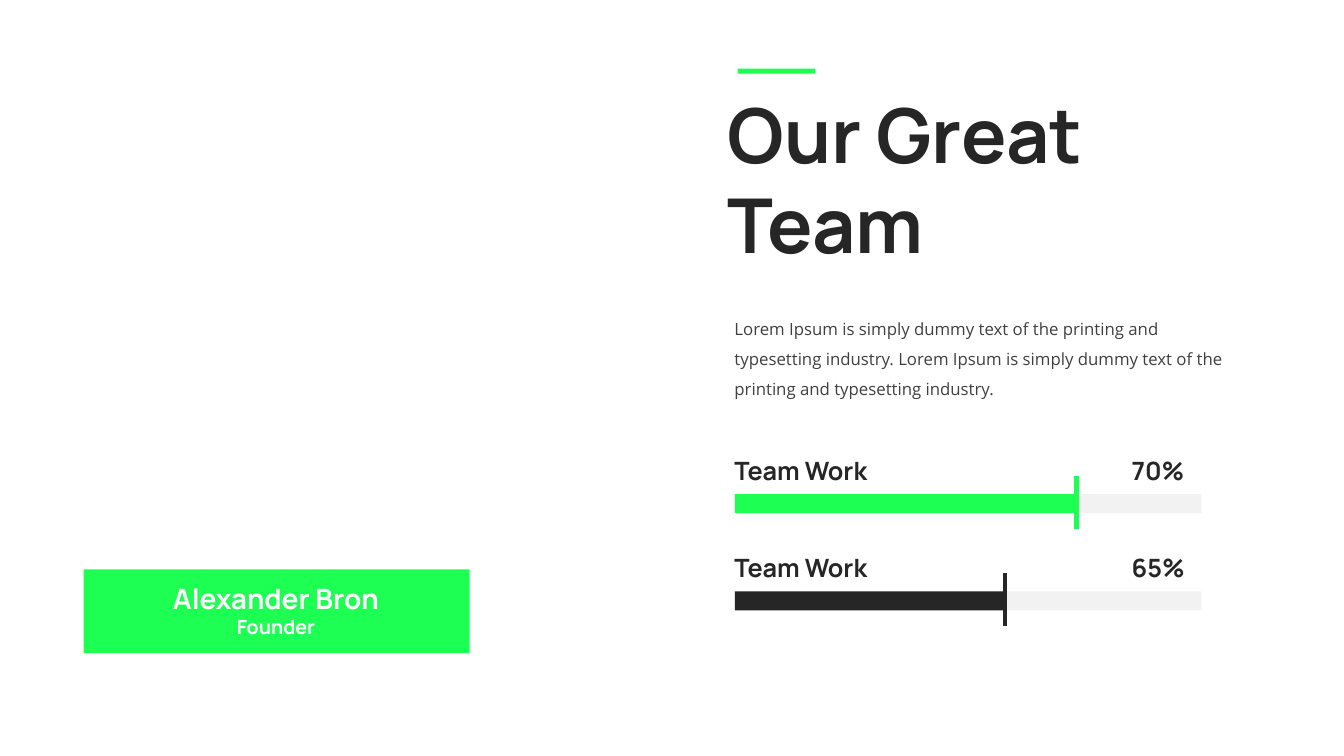
"""Build a team slide with a founder name card and two progress bars."""
from lxml import etree
from pptx import Presentation
from pptx.dml.color import RGBColor
from pptx.enum.shapes import MSO_CONNECTOR, MSO_SHAPE
from pptx.enum.text import MSO_ANCHOR, MSO_AUTO_SIZE, PP_ALIGN
from pptx.oxml.ns import qn
from pptx.util import Cm, Pt

RECTANGLE = MSO_SHAPE.RECTANGLE
STRAIGHT = MSO_CONNECTOR.STRAIGHT
TOP = MSO_ANCHOR.TOP
NO_AUTOSIZE = MSO_AUTO_SIZE.NONE
LEFT = PP_ALIGN.LEFT
CENTER = PP_ALIGN.CENTER

GREEN = "1DFF53"
DARK = "262626"
GREY = "404040"
PALE = "F2F2F2"
WHITE = "FFFFFF"
HEADING_FONT = "Manrope"
BODY_FONT = "Open Sans"
color = RGBColor.from_string


def add_bar(left, top, width, height, fill):
    bar = slide.shapes.add_shape(RECTANGLE, Cm(left), Cm(top), Cm(width), Cm(height))
    bar.shadow.inherit = False
    bar.fill.solid()
    bar.fill.fore_color.rgb = color(fill)
    bar.line.fill.background()


def write(box, place, text, size, text_color, align=LEFT, font=HEADING_FONT, spacing=1.0):
    box.left, box.top, box.width, box.height = [Cm(length) for length in place]
    frame = box.text_frame
    frame.text = text
    frame.word_wrap = True
    frame.auto_size = NO_AUTOSIZE
    frame.vertical_anchor = TOP
    para = frame.paragraphs[0]
    para.alignment = align
    para.line_spacing = spacing
    para.space_before = Pt(0)
    span = para.runs[0]
    span.font.name = font
    span.font.size = Pt(size)
    span.font.bold = font == HEADING_FONT
    span.font.color.rgb = color(text_color)


deck = Presentation()
deck.slide_width = Cm(33.87)
deck.slide_height = Cm(19.05)
slide = deck.slides.add_slide(deck.slide_layouts[5])

add_bar(18.59, 1.73, 1.96, 0.13, GREEN)
write(slide.shapes.title, (18.08, 2.08, 11.43, 4.88), "Our Great Team", 54, DARK)

add_bar(2.11, 14.35, 9.73, 2.11, GREEN)
captions = [
    ("Alexander Bron", 14.53, 1.12, 20, WHITE, CENTER),
    ("Founder", 15.37, 0.86, 14, WHITE, CENTER),
]
for text, top, height, size, text_color, align in captions:
    box = slide.shapes.add_textbox(0, 0, 0, 0)
    write(box, (3.73, top, 6.45, height), text, size, text_color, align)

intro = (
    "Lorem Ipsum is simply dummy text of the printing and typesetting industry. "
    "Lorem Ipsum is simply dummy text of the printing and typesetting industry."
)
box = slide.shapes.add_textbox(0, 0, 0, 0)
write(box, (18.26, 7.65, 13.06, 2.49), intro, 12, GREY, font=BODY_FONT, spacing=1.5)

skills = [("Team Work", "70%", 8.61, GREEN), ("Team Work", "65%", 6.81, DARK)]
track_left = 18.52
for row, (skill, percent, length, fill) in enumerate(skills):
    top = 11.35 + row * 2.45
    add_bar(track_left, top + 1.1, 11.76, 0.48, PALE)
    add_bar(track_left, top + 1.1, length, 0.48, fill)
    marker_x = Cm(track_left + length)
    marker = slide.shapes.add_connector(
        STRAIGHT, marker_x, Cm(top + 0.64), marker_x, Cm(top + 1.98)
    )
    marker.line.color.rgb = color(fill)
    marker.line.width = Pt(3)
    etree.SubElement(marker.element.spPr, qn("a:effectLst"))
    for text, left, width in [(skill, 18.26, 5.72), (percent, 28.27, 2.49)]:
        box = slide.shapes.add_textbox(0, 0, 0, 0)
        write(box, (left, top, width, 1.02), text, 18, DARK)

deck.save("out.pptx")
